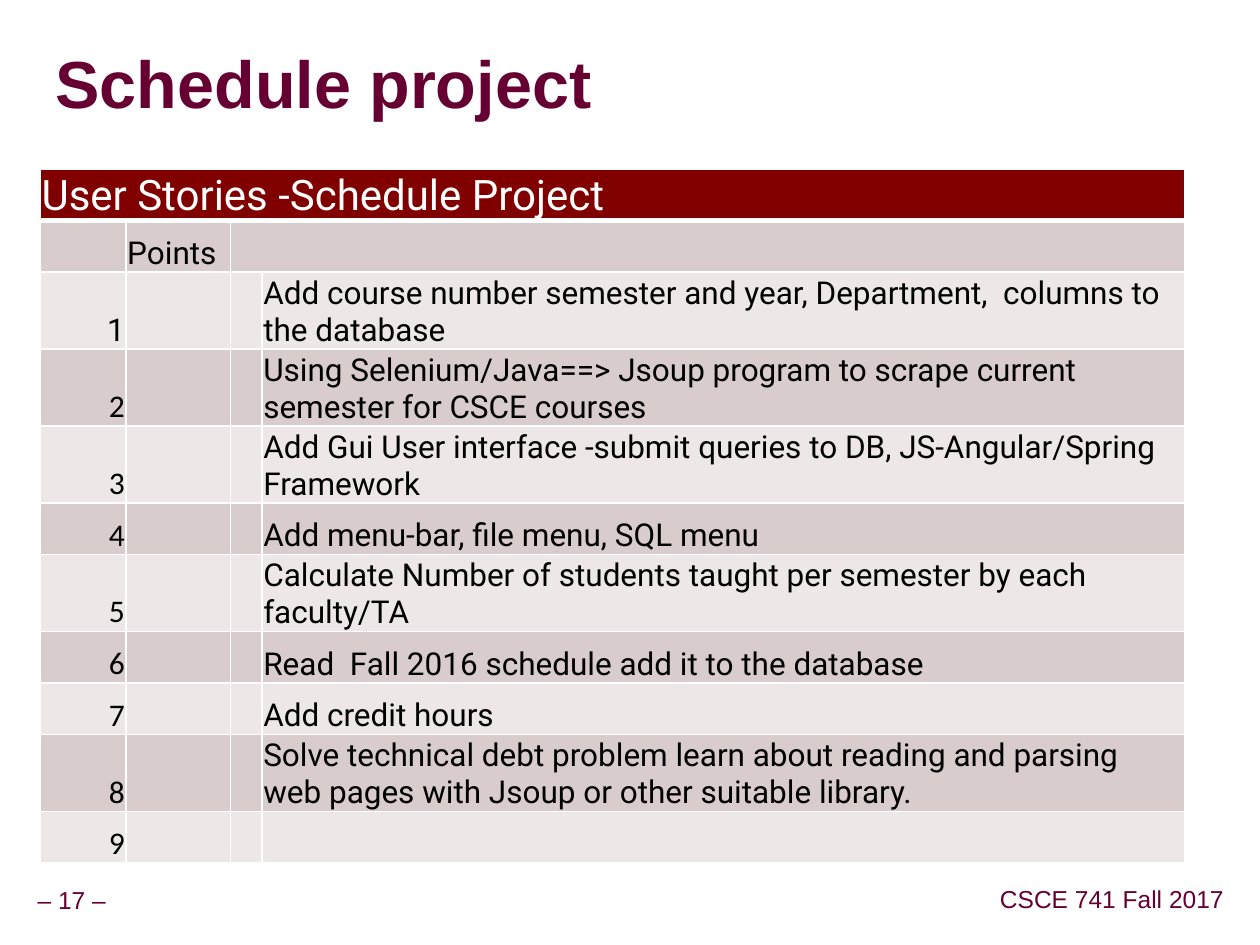
from dataclasses import dataclass

from lxml import etree
from pptx import Presentation
from pptx.dml.color import RGBColor
from pptx.enum import text
from pptx.oxml import ns
from pptx.util import Inches, Pt


@dataclass(frozen=True)
class Theme:
    plum: str = "660033"
    maroon: str = "800000"
    bands: tuple = ("D8CCCC", "EDE7E7")
    white: str = "FFFFFF"
    black: str = "000000"
    shadow: str = "969696"
    heading: str = "Arial"
    body: str = "Roboto"
    number: str = "Calibri"
    title_size: int = 38
    header_size: int = 24
    body_size: int = 18
    footer_size: int = 14


THEME = Theme()
STORIES = [
    "Add course number semester and year, Department,  columns to the database",
    "Using Selenium/Java==> Jsoup program to scrape current semester for CSCE courses",
    "Add Gui User interface -submit queries to DB, JS-Angular/Spring Framework",
    "Add menu-bar, file menu, SQL menu",
    "Calculate Number of students taught per semester by each faculty/TA",
    "Read  Fall 2016 schedule add it to the database",
    "Add credit hours",
    "Solve technical debt problem learn about reading and parsing web pages "
    "with Jsoup or other suitable library.",
    "",
]
COLUMNS = (0.68, 0.83, 0.25, 7.32)
ROW_HEIGHT = 0.41


def style_font(font, name, size, color, bold=False):
    font.name, font.size, font.bold = name, Pt(size), bold
    font.color.rgb = RGBColor.from_string(color)


def add_label(page, box, words, size, inset, spacing, wrap, align, bold=False):
    """Place one line of heading type and return its run."""
    frame = page.shapes.add_textbox(*map(Inches, box)).text_frame
    frame.text = words
    frame.word_wrap = wrap
    frame.vertical_anchor = text.MSO_ANCHOR.MIDDLE
    frame.margin_left = frame.margin_right = Inches(inset)
    frame.margin_top = frame.margin_bottom = Inches(inset)
    para = frame.paragraphs[0]
    para.alignment, para.line_spacing = align, spacing
    span = para.runs[0]
    style_font(span.font, THEME.heading, size, THEME.plum, bold)
    return span


def add_title(page, box, words):
    span = add_label(page, box, words, THEME.title_size, 0, 0.87, True,
                     text.PP_ALIGN.LEFT, bold=True)
    effects = etree.Element(ns.qn("a:effectLst"))
    shadow = etree.SubElement(effects, ns.qn("a:outerShdw"),
                              dist="50800", dir="2700000", algn="tl")
    etree.SubElement(shadow, ns.qn("a:srgbClr"), val=THEME.shadow)
    span.font._element.find(ns.qn("a:solidFill")).addnext(effects)


def add_footer(page, box, words):
    add_label(page, box, words, THEME.footer_size, 0.05, 0.9, False,
              text.PP_ALIGN.CENTER)


def style_cell(cell, fill, top=1, bottom=1):
    """Set fill, margins, anchor and white borders with widths in points."""
    properties = cell._tc.get_or_add_tcPr()
    for side, width in (("L", 1), ("R", 1), ("T", top), ("B", bottom)):
        line = etree.SubElement(properties, ns.qn(f"a:ln{side}"), w=str(Pt(width)))
        paint = etree.SubElement(line, ns.qn("a:solidFill"))
        etree.SubElement(paint, ns.qn("a:srgbClr"), val=THEME.white)
    cell.fill.solid()
    cell.fill.fore_color.rgb = RGBColor.from_string(fill)
    cell.margin_left = cell.margin_right = cell.margin_top = Inches(0.01)
    cell.margin_bottom = 0
    cell.vertical_anchor = text.MSO_ANCHOR.BOTTOM


def fill_cell(cell, words, font, size=THEME.body_size, color=THEME.black,
              align=text.PP_ALIGN.LEFT):
    para = cell.text_frame.paragraphs[0]
    para.text, para.alignment = words, align
    style_font(para.font, font, size, color)
    for span in para.runs:
        style_font(span.font, font, size, color)


def add_stories(page, left, top):
    row_count = len(STORIES) + 2
    table = page.shapes.add_table(
        row_count, len(COLUMNS), Inches(left), Inches(top),
        Inches(sum(COLUMNS)), Inches(ROW_HEIGHT * row_count)).table
    for column, width in zip(table.columns, COLUMNS):
        column.width = Inches(width)
    for index, row in enumerate(table.rows):
        row.height = Inches(ROW_HEIGHT)
        fill = THEME.bands[(index - 1) % 2] if index else THEME.maroon
        for cell in row.cells:
            style_cell(cell, fill, top=3 if index == 1 else 1,
                       bottom=1 if index else 3)

    table.cell(0, 0).merge(table.cell(0, 3))
    table.cell(1, 2).merge(table.cell(1, 3))
    fill_cell(table.cell(0, 0), "User Stories -Schedule Project", THEME.body,
              THEME.header_size, THEME.white)
    fill_cell(table.cell(1, 1), "Points", THEME.body)
    for number, story in enumerate(STORIES, 1):
        fill_cell(table.cell(number + 1, 0), str(number),
                  THEME.body if number == 1 else THEME.number,
                  align=text.PP_ALIGN.RIGHT)
        fill_cell(table.cell(number + 1, 3), story, THEME.body)


def main():
    deck = Presentation()
    deck.slide_width, deck.slide_height = Inches(10), Inches(7.5)
    page = deck.slides.add_slide(deck.slide_layouts[6])
    add_footer(page, (0.24, 7, 0.66, 0.31), "– 17 –")
    add_footer(page, (7.88, 6.99, 1.89, 0.31), "CSCE 741 Fall 2017")
    add_title(page, (0.44, 0.27, 9.53, 0.85), "Schedule project")
    add_stories(page, 0.32, 1.34)
    deck.save("out.pptx")


if __name__ == "__main__":
    main()
